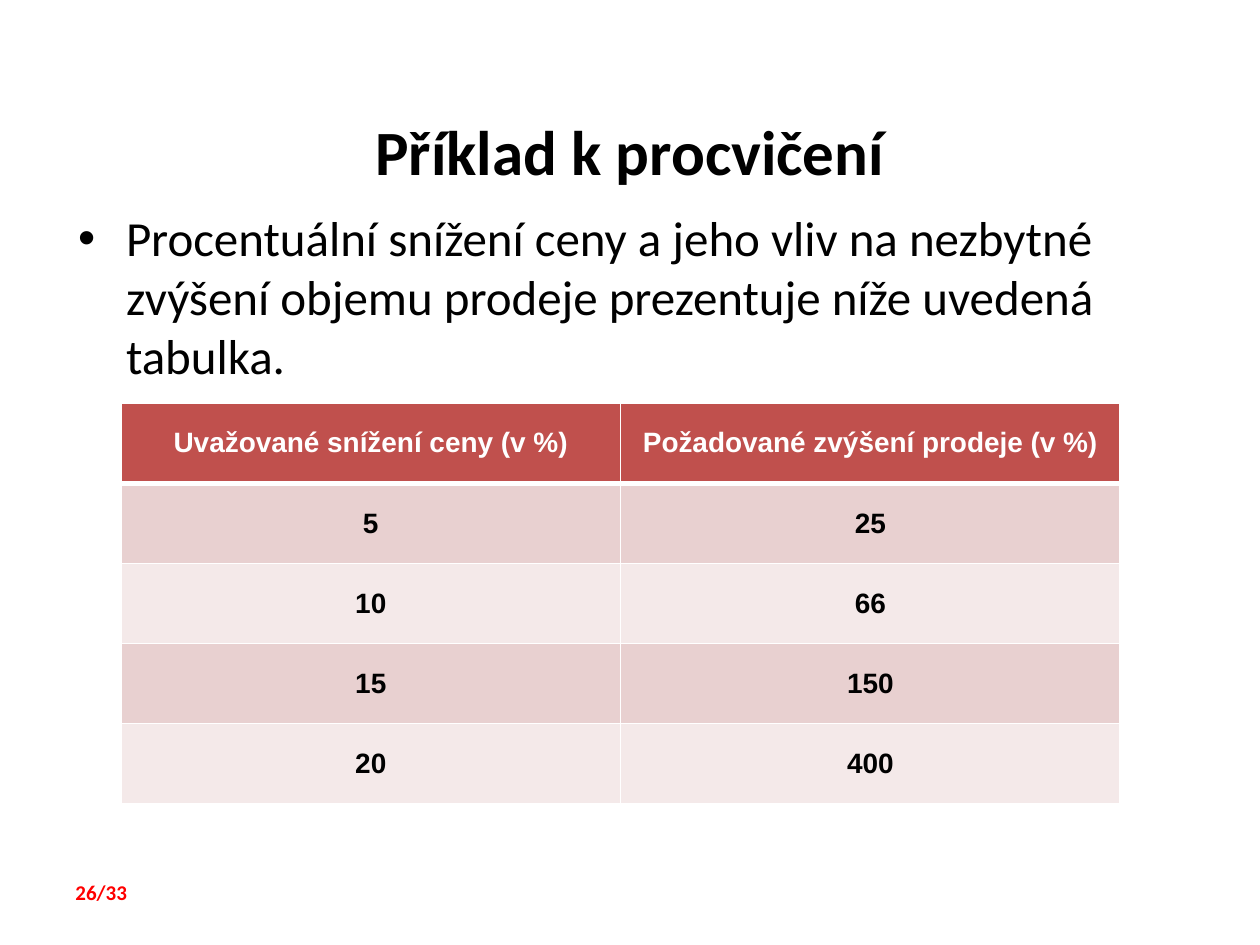
from lxml import etree
from pptx import Presentation
from pptx.dml.color import RGBColor
from pptx.enum.text import MSO_ANCHOR, MSO_AUTO_SIZE, PP_ALIGN
from pptx.oxml.ns import qn
from pptx.util import Inches, Pt

CENTER, LEFT = PP_ALIGN.CENTER, PP_ALIGN.LEFT
MIDDLE, TOP = MSO_ANCHOR.MIDDLE, MSO_ANCHOR.TOP
NO_AUTOFIT = MSO_AUTO_SIZE.NONE

BLACK = RGBColor(0x00, 0x00, 0x00)
WHITE = RGBColor(0xFF, 0xFF, 0xFF)
RED = RGBColor(0xFF, 0x00, 0x00)
HEADER_FILL = RGBColor(0xC0, 0x50, 0x4D)
BAND_FILLS = (RGBColor(0xE8, 0xD0, 0xD0), RGBColor(0xF4, 0xE9, 0xE9))

TITLE_FORMAT = {"name": "Calibri", "size": Pt(36), "bold": True}
BODY_FORMAT = {"name": "Calibri", "size": Pt(28), "bold": False}
PAGE_FORMAT = {"name": "Calibri", "size": Pt(12), "bold": True}
CELL_FORMAT = {"name": "Arial", "size": Pt(16), "bold": True}

PRICE_TABLE = [
    ("Uvažované snížení ceny (v %)", "Požadované zvýšení prodeje (v %)"),
    ("5", "25"),
    ("10", "66"),
    ("15", "150"),
    ("20", "400"),
]


def write_text(frame, text, font_format, color, align=LEFT, anchor=TOP):
    frame.word_wrap = True
    frame.vertical_anchor = anchor
    paragraph = frame.paragraphs[0]
    paragraph.alignment = align
    paragraph.space_before = Pt(0)
    run = paragraph.add_run()
    run.text = text
    for attribute, value in font_format.items():
        setattr(run.font, attribute, value)
    run.font.color.rgb = color
    return paragraph


def place(shape, box):
    shape.left, shape.top, shape.width, shape.height = map(Inches, box)
    shape.text_frame.auto_size = NO_AUTOFIT


def add_title(slide, box, text):
    title = slide.shapes.title
    place(title, box)
    write_text(title.text_frame, text, TITLE_FORMAT, BLACK, CENTER, MIDDLE)


def add_statement(slide, box, text):
    body = slide.placeholders[1]
    place(body, box)
    paragraph = write_text(body.text_frame, text, BODY_FORMAT, BLACK)
    properties = paragraph._p.get_or_add_pPr()
    properties.set("marL", str(Inches(0.4)))
    properties.set("indent", str(Inches(-0.38)))
    etree.SubElement(properties, qn("a:buFont")).set("typeface", "Arial")
    etree.SubElement(properties, qn("a:buChar")).set("char", "•")


def set_borders(cell, widths):
    """Draw white cell borders; widths maps an edge letter to points."""
    properties = cell._tc.get_or_add_tcPr()
    for edge, width in widths.items():
        line = etree.SubElement(properties, qn(f"a:ln{edge}"), w=str(Pt(width)))
        fill = etree.SubElement(line, qn("a:solidFill"))
        etree.SubElement(fill, qn("a:srgbClr"), val=str(WHITE))


def add_price_table(slide, box, rows):
    frame = slide.shapes.add_table(len(rows), len(rows[0]), *map(Inches, box))
    for row_index, row in enumerate(rows):
        is_header = row_index == 0
        fill = HEADER_FILL if is_header else BAND_FILLS[(row_index - 1) % 2]
        widths = {
            "L": 1,
            "R": 1,
            "T": 3 if row_index == 1 else 1,
            "B": 3 if is_header else 1,
        }
        for column_index, text in enumerate(row):
            cell = frame.table.cell(row_index, column_index)
            set_borders(cell, widths)
            cell.fill.solid()
            cell.fill.fore_color.rgb = fill
            cell.vertical_anchor = MIDDLE
            write_text(cell.text_frame, text, CELL_FORMAT,
                       WHITE if is_header else BLACK, CENTER, MIDDLE)


def add_page_number(slide, box, text):
    page_number = slide.shapes.add_textbox(*map(Inches, box))
    write_text(page_number.text_frame, text, PAGE_FORMAT, RED)


def main():
    presentation = Presentation()
    presentation.slide_width = Inches(10)
    presentation.slide_height = Inches(7.5)
    slide = presentation.slides.add_slide(presentation.slide_layouts[1])
    add_title(slide, (0.5, 0.57, 9, 1.25), "Příklad k procvičení")
    add_statement(
        slide, (0.5, 1.6, 9, 5.34),
        "Procentuální snížení ceny a jeho vliv na nezbytné zvýšení objemu "
        "prodeje prezentuje níže uvedená tabulka.")
    add_page_number(slide, (0.5, 6.93, 0.92, 0.3), "26/33")
    add_price_table(slide, (0.96, 3.2, 7.93, 3.18), PRICE_TABLE)
    presentation.save("out.pptx")


if __name__ == "__main__":
    main()
